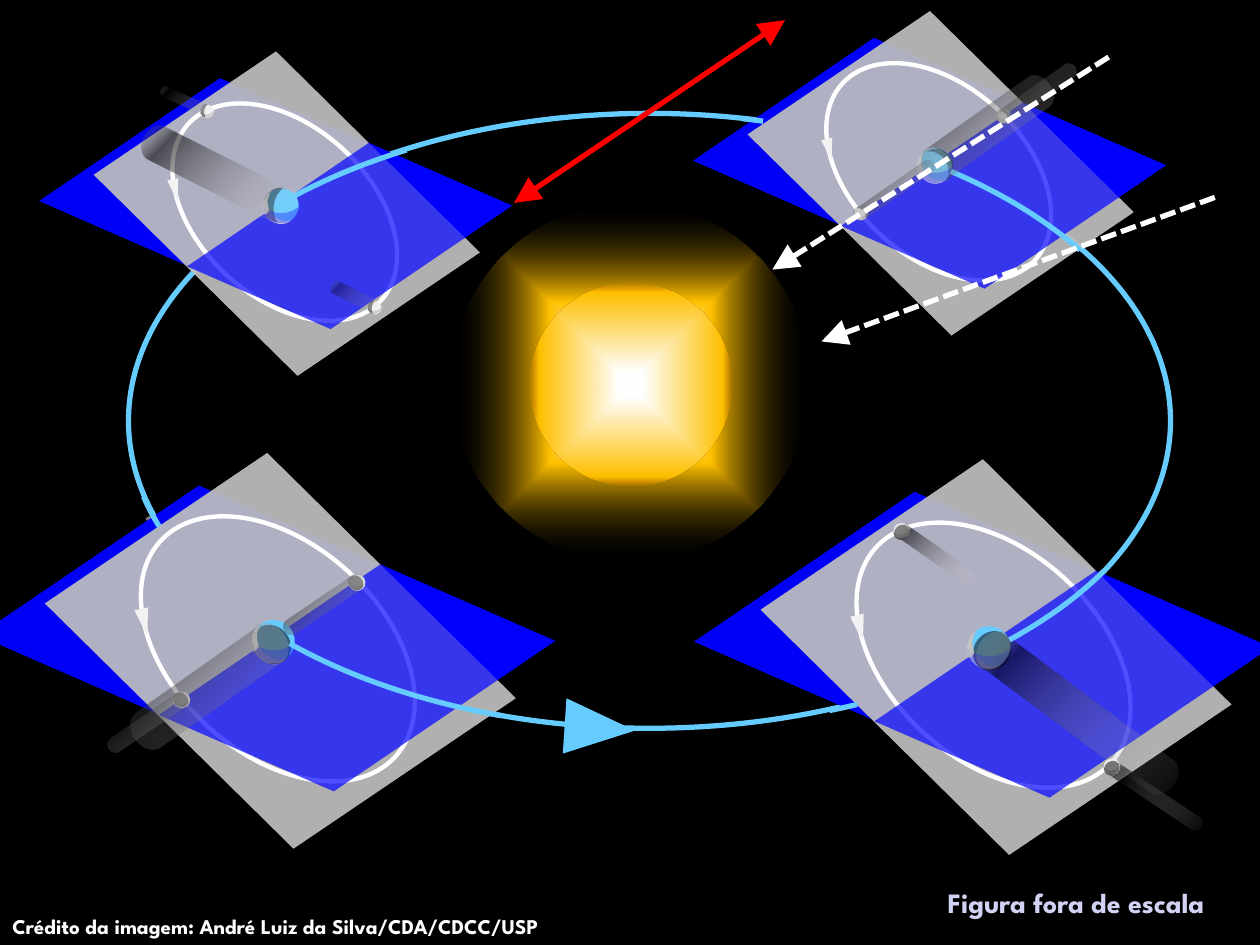
from dataclasses import dataclass
from typing import Any, Optional

from pptx import Presentation
from pptx.dml.color import RGBColor
from pptx.enum.dml import MSO_LINE
from pptx.enum.shapes import MSO_CONNECTOR, MSO_SHAPE
from pptx.enum.text import MSO_AUTO_SIZE, PP_ALIGN
from pptx.oxml import parse_xml
from pptx.oxml.ns import nsdecls, qn
from pptx.oxml.xmlchemy import OxmlElement
from pptx.util import Inches, Pt


@dataclass(frozen=True)
class Theme:
    space: str = "000000"
    white: str = "FFFFFF"
    sky: str = "66CCFF"
    blue: str = "0000FF"
    plane: str = "BFBFBF"
    ice: str = "D9D9D9"
    satellite: str = "F2F2F2"
    silver: str = "C0C0C0"
    gold: str = "FFC000"
    amber: str = "EE8800"
    red: str = "FF0000"
    lilac: str = "D2D2F4"
    font: str = "League Spartan"
    credit_size: int = 12
    note_size: int = 16


THEME = Theme()


@dataclass(frozen=True)
class Part:
    kind: MSO_SHAPE
    left: float
    top: float
    width: float
    height: float
    rotation: float = 0
    adjust: tuple = ()
    fill: Optional[str] = None
    alpha: int = 100
    line: Optional[str] = None
    weight: float = 0
    line_alpha: int = 100
    stops: tuple = ()
    gradient: str = "shape"
    focus: tuple = (50, 50, 50, 50)


@dataclass(frozen=True)
class Satellite:
    left: float
    top: float
    shade: Part


@dataclass(frozen=True)
class Station:
    left: float
    top: float
    scale: float
    shade: Part
    details: tuple


@dataclass(frozen=True)
class Arrow:
    begin: tuple
    end: tuple
    color: str
    dashed: bool = False
    both_ends: bool = False


def orbit_arc(left: float, top: float, start: float, end: float, color: str = THEME.sky,
              weight: float = 3, alpha: int = 100) -> Part:
    """Describe a stretch of the planet's orbit."""
    return Part(MSO_SHAPE.ARC, left, top, 8.3, 4.92, adjust=(start, end),
                line=color, weight=weight, line_alpha=alpha)


def shadow(left: float, top: float, width: float, height: float, rotation: float,
           adjust: float = 0.98, alpha: int = 56) -> Part:
    """Describe a fading shadow cast away from the sun."""
    stops = ((0, THEME.white, 0), (81, THEME.space, alpha), (100, THEME.plane, 0))
    return Part(MSO_SHAPE.CAN, left, top, width, height, rotation, (adjust,),
                stops=stops, gradient="circle", focus=(100, 100, 0, 0))


def night_disc(left: float, top: float, width: float, height: float, rotation: float) -> Part:
    """Describe a round night side."""
    return Part(MSO_SHAPE.OVAL, left, top, width, height, rotation, fill=THEME.space, alpha=51)


def night_crescent(left: float, top: float, width: float, height: float,
                   rotation: float, adjust: float) -> Part:
    """Describe a crescent night side."""
    return Part(MSO_SHAPE.MOON, left, top, width, height, rotation, (adjust,), THEME.space, 47)


PLANES = (
    Part(MSO_SHAPE.PARALLELOGRAM, 0, 0, 4.21, 1.79, 23.6, (0.63,), THEME.blue, 97),
    Part(MSO_SHAPE.PARALLELOGRAM, 0.62, -0.05, 3.19, 2.09, 44.6, (0.2,), THEME.plane, 92),
    Part(MSO_SHAPE.OVAL, 0.93, 0.15, 2.53, 1.66, 42.6, line=THEME.white, weight=2.5),
    Part(MSO_SHAPE.PARALLELOGRAM, 1.5, 0.31, 2.65, 1.8, 23.6, (0.63,), THEME.blue, 69),
    Part(MSO_SHAPE.OVAL, 1.99, 0.75, 0.34, 0.34, 351.5, fill=THEME.sky),
    Part(MSO_SHAPE.MOON, 2.01, 0.81, 0.16, 0.34, 320.6, (0.34,), THEME.ice, 94),
)
FINISH = (
    Part(MSO_SHAPE.MOON, 2.08, 0.84, 0.16, 0.34, 270, (0.63,), THEME.blue, 36),
    Part(MSO_SHAPE.ISOSCELES_TRIANGLE, 1.08, 0.66, 0.11, 0.22, 167.6, fill=THEME.satellite),
)
LAND = ((2.07, 0.77), (2.05, 0.8), (2.04, 0.83), (2.03, 0.86), (2.03, 0.9), (2.04, 0.95),
        (2.04, 0.97), (2.01, 1), (2, 1), (1.99, 0.97), (1.98, 0.92), (2, 0.86), (2.03, 0.81))
SATELLITE_BODY = (
    Part(MSO_SHAPE.OVAL, 0, 0, 0.13, 0.13, 351.5, fill=THEME.satellite),
    Part(MSO_SHAPE.MOON, 0.03, 0.03, 0.06, 0.13, 270, (0.5,), THEME.silver, 72),
)
DISC_LEFT = night_disc(0, 0, 0.11, 0.13, 316.4)
CRESCENT_RIGHT = night_crescent(0.06, -0.02, 0.06, 0.13, 142.5, 0.46)
CRESCENT_LEFT = night_crescent(0, -0.01, 0.06, 0.13, 9.4, 0.63)

FRONT_LEFT = Station(0.01, 4.17, 1, night_disc(2, 0.78, 0.29, 0.33, 316.4), (
    Satellite(1.38, 5.49, DISC_LEFT), Satellite(2.77, 4.56, DISC_LEFT),
    orbit_arc(1, 0.86, 69.82, 88.74),
    shadow(2.51, 4.42, 0.13, 0.75, 56), shadow(1.49, 4.73, 0.34, 1.44, 55, 0.77),
    shadow(1.11, 5.36, 0.13, 0.75, 56)))
BACK_RIGHT = Station(5.65, 0.56, 0.82, night_crescent(2.16, 0.71, 0.16, 0.34, 146.6, 0.36), (
    Satellite(6.78, 1.64, CRESCENT_RIGHT), Satellite(7.91, 0.87, CRESCENT_RIGHT),
    orbit_arc(0.98, 0.9, 192.25, 202.94),
    shadow(8.16, 0.37, 0.13, 0.75, 235.1), shadow(7.69, 0.42, 0.29, 1.2, 234.8, 0.75),
    shadow(7.04, 1.14, 0.11, 0.75, 235.2)))
BACK_LEFT = Station(0.46, 0.88, 0.82, night_crescent(1.99, 0.73, 0.16, 0.34, 9.4, 0.63), (
    Satellite(2.92, 2.39, CRESCENT_LEFT), Satellite(1.59, 0.83, CRESCENT_LEFT),
    orbit_arc(0.97, 0.92, 127.98, 137.49),
    shadow(1.6, 0.72, 0.29, 1.34, 116.5, 0.75), shadow(2.78, 2.14, 0.11, 0.45, 116.4, alpha=35),
    shadow(1.43, 0.59, 0.09, 0.43, 114, 0.87)))
FRONT_RIGHT = Station(5.69, 4.22, 1, night_disc(2.04, 0.78, 0.29, 0.33, 220), (
    Satellite(7.09, 4.15, night_disc(0.01, 0.01, 0.11, 0.13, 48.2)),
    shadow(8.39, 4.71, 0.32, 1.9, 306.8, 0.75), shadow(7.36, 4.02, 0.12, 0.75, 304.8),
    shadow(9.09, 5.85, 0.12, 0.92, 303.7),
    Satellite(8.76, 6.02, night_disc(0.01, 0.01, 0.11, 0.13, 240.2)),
    orbit_arc(1.05, 0.81, 11.81, 19.65)))

ORBIT = (
    Part(MSO_SHAPE.OVAL, 1.02, 0.9, 8.27, 4.88, line=THEME.sky, weight=3),
    orbit_arc(0.99, 0.89, 100.54, 101.58, THEME.white, 5, 50),
    Part(MSO_SHAPE.ISOSCELES_TRIANGLE, 4.54, 5.5, 0.44, 0.56, 93.8, fill=THEME.sky),
)
LEFT_ARCS = (orbit_arc(0.98, 0.9, 172.51, 174.68), orbit_arc(1.01, 0.87, 100.64, 102.81))
RIGHT_ARC = orbit_arc(1.1, 0.85, 33.45, 36.15)
SUN = (
    Part(MSO_SHAPE.OVAL, 3.58, 1.61, 2.84, 2.85,
         stops=((7, THEME.white, 100), (45, THEME.gold, 100), (100, THEME.space, 0))),
    Part(MSO_SHAPE.OVAL, 4.2, 2.24, 1.61, 1.62,
         stops=((12, THEME.white, 100), (90, THEME.gold, 100), (100, THEME.amber, 0))),
)
ARROWS = (
    Arrow((6.52, 2.71), (9.66, 1.56), THEME.white, dashed=True),
    Arrow((6.13, 2.14), (8.82, 0.44), THEME.white, dashed=True),
)
NODE_LINE = Arrow((6.23, 0.16), (4.08, 1.61), THEME.red, both_ends=True)


def set_alpha(shape: Any, holder: str, alpha: int) -> None:
    """Give the colour of a fill or line its opacity."""
    if alpha < 100:
        color = shape._element.spPr.find(holder).find(".//" + qn("a:srgbClr"))
        opacity = OxmlElement("a:alpha")
        opacity.set("val", str(alpha * 1000))
        color.append(opacity)


def paint_solid(shape: Any, color: str, alpha: int) -> None:
    """Fill a shape with one colour."""
    shape.fill.solid()
    shape.fill.fore_color.rgb = RGBColor.from_string(color)
    set_alpha(shape, qn("a:solidFill"), alpha)


def paint_gradient(shape: Any, part: Part) -> None:
    """Fill a shape with a gradient that spreads from its focus."""
    stops = "".join(
        f'<a:gs pos="{place * 1000}"><a:srgbClr val="{color}"><a:alpha val="{alpha * 1000}"/>'
        f"</a:srgbClr></a:gs>" for place, color, alpha in part.stops)
    focus = " ".join(f'{side}="{share * 1000}"' for side, share in zip("ltrb", part.focus))
    gradient = parse_xml(
        f'<a:gradFill {nsdecls("a")} rotWithShape="1"><a:gsLst>{stops}</a:gsLst>'
        f'<a:path path="{part.gradient}"><a:fillToRect {focus}/></a:path></a:gradFill>')
    properties = shape._element.spPr
    properties.replace(properties.find(qn("a:noFill")), gradient)


def draw_part(shapes: Any, part: Part, left: float = 0, top: float = 0, scale: float = 1) -> None:
    """Draw one part, scaled and moved to its place."""
    shape = shapes.add_shape(
        part.kind, Inches(left + part.left * scale), Inches(top + part.top * scale),
        Inches(part.width * scale), Inches(part.height * scale))
    shape.rotation = part.rotation
    shape.shadow.inherit = False
    for index, value in enumerate(part.adjust):
        shape.adjustments[index] = value
    shape.fill.background()
    if part.stops:
        paint_gradient(shape, part)
    elif part.fill:
        paint_solid(shape, part.fill, part.alpha)
    if part.line:
        shape.line.color.rgb = RGBColor.from_string(part.line)
        shape.line.width = Pt(part.weight)
        set_alpha(shape, qn("a:ln"), part.line_alpha)
    else:
        shape.line.fill.background()


def draw_land(shapes: Any, station: Station) -> None:
    """Draw the polar land on a station's planet."""
    points = [(Inches(station.left + x * station.scale), Inches(station.top + y * station.scale))
              for x, y in LAND]
    builder = shapes.build_freeform(*points[0])
    builder.add_line_segments(points[1:], close=True)
    land = builder.convert_to_shape()
    land.shadow.inherit = False
    paint_solid(land, THEME.plane, 85)
    land.line.fill.background()


def draw_station(page: Any, station: Station) -> None:
    """Draw a planet with its planes, satellites and shadows as a group."""
    shapes = page.shapes.add_group_shape().shapes
    for part in (*PLANES, station.shade, *FINISH):
        draw_part(shapes, part, station.left, station.top, station.scale)
    draw_land(shapes, station)
    for detail in station.details:
        if isinstance(detail, Satellite):
            for part in (*SATELLITE_BODY, detail.shade):
                draw_part(shapes, part, detail.left, detail.top, station.scale)
        else:
            draw_part(shapes, detail)


def draw_arrow(page: Any, arrow: Arrow) -> None:
    """Draw a straight line with one or two arrowheads."""
    connector = page.shapes.add_connector(
        MSO_CONNECTOR.STRAIGHT, *map(Inches, arrow.begin), *map(Inches, arrow.end))
    connector.line.color.rgb = RGBColor.from_string(arrow.color)
    connector.line.width = Pt(3)
    if arrow.dashed:
        connector.line.dash_style = MSO_LINE.SQUARE_DOT
    for tag in ("a:headEnd", "a:tailEnd")[:2 if arrow.both_ends else 1]:
        tip = OxmlElement(tag)
        for name, value in (("type", "triangle"), ("w", "lg"), ("len", "lg")):
            tip.set(name, value)
        connector.line._get_or_add_ln().append(tip)
    connector._element.spPr.append(OxmlElement("a:effectLst"))


def write_label(page: Any, text: str, place: tuple, size: int, color: str,
                align: PP_ALIGN, wrap: bool) -> None:
    """Write one bold line of text."""
    box = page.shapes.add_textbox(*map(Inches, place))
    box.text_frame.word_wrap = wrap
    box.text_frame.auto_size = MSO_AUTO_SIZE.SHAPE_TO_FIT_TEXT
    para = box.text_frame.paragraphs[0]
    para.alignment = align
    span = para.add_run()
    span.text = text
    span.font.name = THEME.font
    span.font.size = Pt(size)
    span.font.bold = True
    span.font.color.rgb = RGBColor.from_string(color)


def main() -> None:
    """Build the slide and save it."""
    deck = Presentation()
    deck.slide_width, deck.slide_height = Inches(10), Inches(7.5)
    page = deck.slides.add_slide(deck.slide_layouts[6])
    page.background.fill.solid()
    page.background.fill.fore_color.rgb = RGBColor.from_string(THEME.space)
    for part in ORBIT:
        draw_part(page.shapes, part)
    write_label(page, "Crédito da imagem: André Luiz da Silva/CDA/CDCC/USP", (0, 7.2, 5.28, 0.3),
                THEME.credit_size, THEME.white, PP_ALIGN.LEFT, True)
    for station in (FRONT_LEFT, BACK_RIGHT, BACK_LEFT):
        draw_station(page, station)
    for part in LEFT_ARCS:
        draw_part(page.shapes, part)
    draw_station(page, FRONT_RIGHT)
    write_label(page, "Figura fora de escala", (7.28, 6.98, 2.52, 0.37),
                THEME.note_size, THEME.lilac, PP_ALIGN.CENTER, False)
    draw_part(page.shapes, RIGHT_ARC)
    draw_arrow(page, NODE_LINE)
    for part in SUN:
        draw_part(page.shapes, part)
    for arrow in ARROWS:
        draw_arrow(page, arrow)
    deck.save("out.pptx")


if __name__ == "__main__":
    main()
